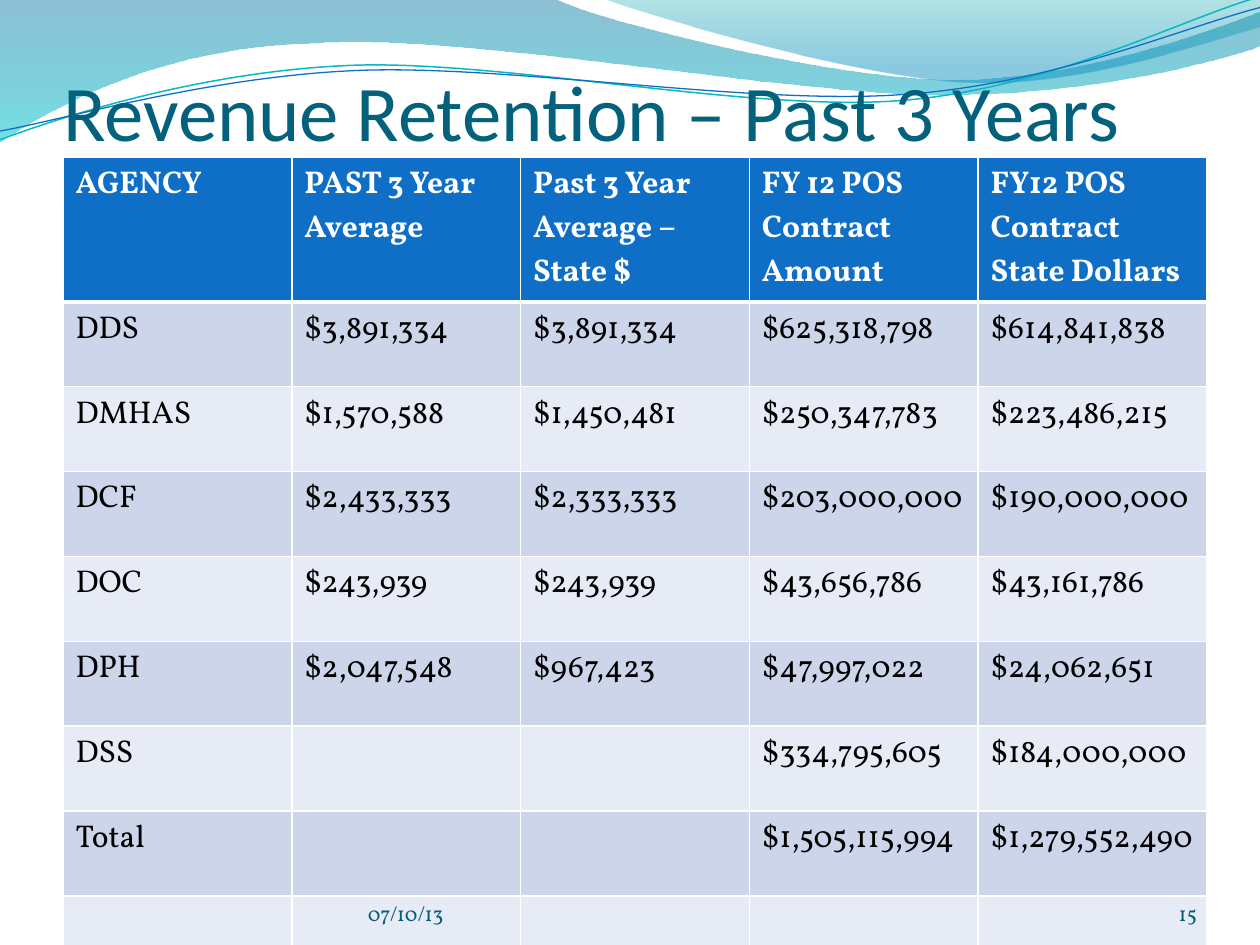
from lxml import etree
from pptx import Presentation
from pptx import util as u
from pptx.dml.color import RGBColor
from pptx.enum import text
from pptx.oxml import ns

FONT = "Vollkorn"

# Each track is a start point, then steps: one point is a line, three are a curve.
WAVE = [(0, 0), [(4.4, -0.01)],
        [(4.76, 0.17), (6.64, 0.63), (7.58, 0.63)],
        [(8.53, 0.63), (9.58, 0.26), (10, 0.09)],
        [(10.01, 0.36)],
        [(9.83, 0.44), (8.7, 0.76), (7.46, 0.75)],
        [(6.22, 0.75), (3.82, 0.28), (2.57, 0.34)],
        [(1.29, 0.36), (0.46, 0.83), (-0.01, 1.13)],
        [(0, 0)]]
CREST = [(4.79, -0.01),
         [(5.09, 0.11), (6.82, 0.62), (7.69, 0.65)],
         [(8.56, 0.69), (9.61, 0.32), (10, 0.21)],
         [(10, 0)],
         [(4.79, -0.01)]]
TEAL = [(0, 1.11),
        [(0.48, 0.93), (1.58, 0.57), (2.77, 0.52)],
        [(3.95, 0.47), (5.93, 0.89), (7.13, 0.8)],
        [(8.33, 0.71), (9.38, 0.15), (9.98, -0.02)]]
BLUE = [(0, 1.04),
        [(0.47, 0.96), (1.64, 0.61), (2.83, 0.56)],
        [(4.03, 0.51), (5.97, 0.84), (7.17, 0.75)],
        [(8.36, 0.67), (9.41, 0.21), (10, 0.06)]]

ROWS = [
    ["AGENCY", "PAST 3 Year Average", "Past 3 Year Average – State $",
     "FY 12 POS Contract Amount", "FY12 POS Contract State Dollars"],
    ["DDS", "$3,891,334", "$3,891,334", "$625,318,798", "$614,841,838"],
    ["DMHAS", "$1,570,588", "$1,450,481", "$250,347,783", "$223,486,215"],
    ["DCF", "$2,433,333", "$2,333,333", "$203,000,000", "$190,000,000"],
    ["DOC", "$243,939", "$243,939", "$43,656,786", "$43,161,786"],
    ["DPH", "$2,047,548", "$967,423", "$47,997,022", "$24,062,651"],
    ["DSS", "", "", "$334,795,605", "$184,000,000"],
    ["Total", "", "", "$1,505,115,994", "$1,279,552,490"],
    [""] * 5,
]


def paint(target, color):
    """Give a fill a solid colour."""
    target.solid()
    target.fore_color.rgb = RGBColor.from_string(color)


def style(para, size, color, font=FONT, bold=False):
    para.font.size = u.Pt(size)
    para.font.name = font
    para.font.bold = bold
    para.font.color.rgb = RGBColor.from_string(color)


def add_curve(slide, track, left, top, closed):
    """Build the outline through its end points, then bend its curved steps."""
    def place(point):
        return u.Inches(left + point[0]), u.Inches(top + point[1])

    start, *steps = track
    maker = slide.shapes.build_freeform(*place(start))
    maker.add_line_segments([place(step[-1]) for step in steps], close=closed)
    shape = maker.convert_to_shape()
    shape.shadow.inherit = False
    lines = list(shape._element.iter(ns.qn("a:lnTo")))
    for line, step in zip(lines, steps):
        if len(step) == 1:
            continue
        bend = etree.Element(ns.qn("a:cubicBezTo"))
        for x, y in map(place, step):
            etree.SubElement(bend, ns.qn("a:pt"),
                             x=str(x - shape.left), y=str(y - shape.top))
        line.getparent().replace(line, bend)
    return shape


def add_wave(slide, track, left, top, stops):
    """Add a closed wave; stops hold position, colour and opacity in percent."""
    wave = add_curve(slide, track, left, top, True)
    wave.line.fill.background()
    wave.fill.gradient()
    wave.fill.gradient_angle = 270
    for stop, (place, color, alpha) in zip(wave.fill.gradient_stops, stops):
        stop.position = place / 100
        stop.color.rgb = RGBColor.from_string(color)
    tints = wave.fill._xPr.iter(ns.qn("a:srgbClr"))
    for tint, (place, color, alpha) in zip(tints, stops):
        etree.SubElement(tint, ns.qn("a:alpha"), val=str(alpha * 1000))


def add_strand(slide, track, left, top, color, width):
    strand = add_curve(slide, track, left, top, False)
    strand.fill.background()
    paint(strand.line.fill, color)
    strand.line.width = u.Pt(width)


def add_banner(slide, left, top):
    add_wave(slide, WAVE, left, top, [(0, "0074A1", 45), (100, "00C6CF", 55)])
    add_wave(slide, CREST, left, top, [(0, "00A1A9", 30), (80, "008BBF", 45)])
    add_strand(slide, TEAL, left, top, "0AB8BF", 0.85)
    add_strand(slide, BLUE, left, top, "0F6FC6", 0.75)


def set_title(slide, words, left, top, width, height):
    title = slide.shapes.title
    title.left, title.top = u.Inches(left), u.Inches(top)
    title.width, title.height = u.Inches(width), u.Inches(height)
    frame = title.text_frame
    frame.text = words
    frame.auto_size = text.MSO_AUTO_SIZE.NONE
    frame.vertical_anchor = text.MSO_ANCHOR.BOTTOM
    frame.margin_left = frame.margin_right = frame.margin_bottom = 0
    frame.margin_top = u.Inches(0.05)
    para = frame.paragraphs[0]
    para.alignment = text.PP_ALIGN.LEFT
    style(para, 45, "04617B", "Calibri")


def edge(cell, widths):
    """Draw white borders; widths are left, right, top, bottom in points."""
    props = cell._tc.get_or_add_tcPr()
    for i, (side, width) in enumerate(zip("LRTB", widths)):
        line = etree.Element(ns.qn(f"a:ln{side}"), w=str(u.Pt(width)))
        fill = etree.SubElement(line, ns.qn("a:solidFill"))
        etree.SubElement(fill, ns.qn("a:srgbClr"), val="FFFFFF")
        props.insert(i, line)


def add_grid(slide, rows, left, top, width, height, last):
    """Add the table; all rows but the last share the height evenly."""
    count = len(rows)
    table = slide.shapes.add_table(
        count, len(rows[0]), u.Inches(left), u.Inches(top),
        u.Inches(width), u.Inches(height)).table
    for r, words in enumerate(rows):
        tall = last if r == count - 1 else (height - last) / (count - 1)
        table.rows[r].height = u.Inches(tall)
        head = r == 0
        back = "0F6FC6" if head else ("E7EBF5", "CCD5EA")[r % 2]
        for c, word in enumerate(words):
            cell = table.cell(r, c)
            paint(cell.fill, back)
            edge(cell, (1, 1, 3 if r == 1 else 1, 3 if head else 1))
            if word:
                cell.text = word
            style(cell.text_frame.paragraphs[0], 18,
                  "FFFFFF" if head else "000000", bold=head)


def add_note(slide, words, left, top, width, height, align):
    box = slide.shapes.add_textbox(u.Inches(left), u.Inches(top),
                                   u.Inches(width), u.Inches(height))
    frame = box.text_frame
    frame.text = words
    frame.word_wrap = True
    frame.vertical_anchor = text.MSO_ANCHOR.BOTTOM
    frame.margin_left = frame.margin_right = 0
    frame.margin_top = frame.margin_bottom = 0
    para = frame.paragraphs[0]
    para.alignment = align
    style(para, 12, "045D75")


def main():
    deck = Presentation()
    deck.slide_width, deck.slide_height = u.Inches(10), u.Inches(7.5)
    slide = deck.slides.add_slide(deck.slide_layouts[5])
    paint(slide.background.fill, "FFFFFF")
    add_banner(slide, 0, 0)
    set_title(slide, "Revenue Retention – Past 3 Years", 0.5, 0.58, 9, 0.67)
    # Bring the title in front of the banner.
    slide.shapes._spTree.append(slide.shapes.title._element)
    add_grid(slide, ROWS, 0.5, 1.25, 9.08, 5.76, 0.37)
    add_note(slide, "07/10/13", 2.92, 6.95, 3.67, 0.4, text.PP_ALIGN.LEFT)
    add_note(slide, "15", 8.67, 6.95, 0.83, 0.4, text.PP_ALIGN.RIGHT)
    deck.save("out.pptx")


if __name__ == "__main__":
    main()
